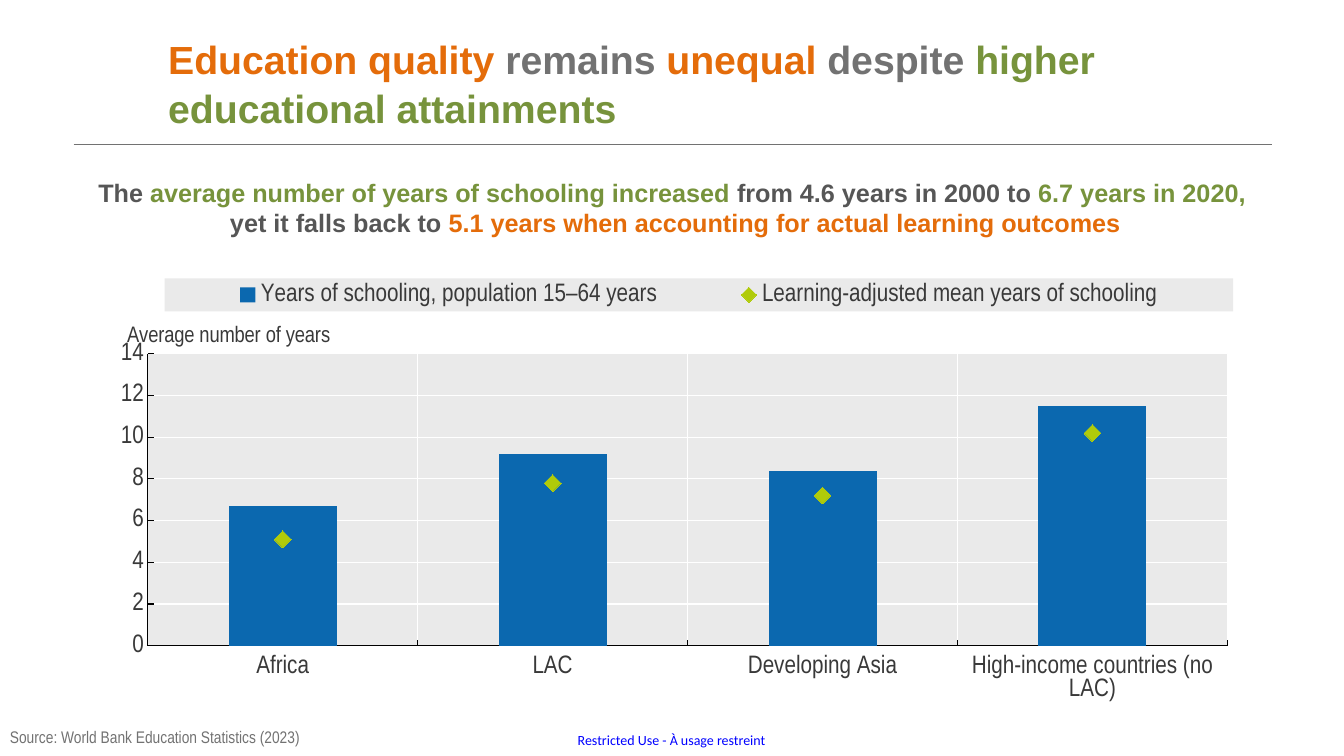
"""Build a slide on schooling years and learning outcomes by region."""
from dataclasses import dataclass

from lxml.etree import SubElement
from pptx import Presentation
from pptx.chart.chart import Chart
from pptx.chart.data import CategoryChartData
from pptx.dml.color import RGBColor
from pptx.enum.chart import (XL_CHART_TYPE, XL_LEGEND_POSITION, XL_MARKER_STYLE,
                             XL_TICK_LABEL_POSITION, XL_TICK_MARK)
from pptx.enum.shapes import MSO_CONNECTOR
from pptx.enum.text import MSO_ANCHOR, PP_ALIGN
from pptx.oxml import parse_xml
from pptx.oxml.ns import nsdecls, qn
from pptx.slide import Slide
from pptx.util import Inches, Pt


@dataclass(frozen=True)
class Theme:
    """Colours, fonts and type sizes of the slide."""
    orange: str = "E46C0A"
    green: str = "77933C"
    grey: str = "727272"
    dark: str = "565656"
    link: str = "0000FF"
    chart_text: str = "393939"
    panel: str = "EAEAEA"
    bar: str = "0B68AF"
    marker: str = "B0CB0A"
    grid: str = "FFFFFF"
    axis: str = "000000"
    sans: str = "Arial"
    narrow: str = "Arial Narrow"
    label: str = "Calibri"
    title: int = 28
    body: int = 18
    axis_title: int = 16
    source: int = 12
    footer: int = 10


THEME = Theme()


@dataclass(frozen=True)
class Span:
    """A stretch of text in one colour."""
    text: str
    color: str


@dataclass(frozen=True)
class TextBlock:
    """A text box with its place, paragraphs and type."""
    left: float
    top: float
    width: float
    height: float
    paras: list[list[Span]]
    font: str
    size: int
    bold: bool = False
    align: PP_ALIGN = PP_ALIGN.LEFT
    anchor: MSO_ANCHOR = MSO_ANCHOR.TOP
    inset: bool = True
    spacing: float = 1.0


@dataclass(frozen=True)
class Place:
    """A position in fractions of the chart area."""
    x: float
    y: float
    w: float = 0
    h: float = 0


BLOCKS = [
    TextBlock(1.57, 0.26, 11.34, 1.12, [[
        Span("Education quality ", THEME.orange), Span("remains ", THEME.grey),
        Span("unequal", THEME.orange), Span(" despite ", THEME.grey),
        Span("higher educational attainments", THEME.green)]],
        THEME.sans, THEME.title, bold=True, anchor=MSO_ANCHOR.MIDDLE, spacing=1.04),
    TextBlock(-0.47, 1.71, 14.27, 0.71, [
        [Span("The ", THEME.dark),
         Span("average number of years of schooling increased ", THEME.green),
         Span("from 4.6 years in 2000 to ", THEME.dark),
         Span("6.7 years in 2020,", THEME.green)],
        [Span(" yet it falls back to ", THEME.dark),
         Span("5.1 years when accounting for actual learning outcomes", THEME.orange)]],
        THEME.sans, THEME.body, bold=True, align=PP_ALIGN.CENTER),
    TextBlock(0, 7.16, 6.38, 0.3,
              [[Span("Source: World Bank Education Statistics (2023)", THEME.grey)]],
              THEME.narrow, THEME.source),
    TextBlock(5.73, 7.26, 1.91, 0.17,
              [[Span("Restricted Use - À usage restreint", THEME.link)]],
              THEME.label, THEME.footer, inset=False),
]
REGIONS = ["Africa", "LAC", "Developing Asia", "High-income countries (no LAC)"]
MEASURES = {
    "Years of schooling, population 15–64 years": [6.7, 9.2, 8.4, 11.5],
    "Learning-adjusted mean years of schooling": [5.1, 7.8, 7.2, 10.2],
}


def rgb(color: str) -> RGBColor:
    """Turn a hex colour into an RGBColor."""
    return RGBColor.from_string(color)


def add_text(page: Slide, block: TextBlock) -> None:
    """Draw one text block."""
    box = page.shapes.add_textbox(Inches(block.left), Inches(block.top),
                                  Inches(block.width), Inches(block.height))
    frame = box.text_frame
    frame.word_wrap = True
    frame.vertical_anchor = block.anchor
    if not block.inset:
        frame.margin_left = frame.margin_right = 0
        frame.margin_top = frame.margin_bottom = 0
    for index, spans in enumerate(block.paras):
        para = frame.add_paragraph() if index else frame.paragraphs[0]
        para.alignment = block.align
        para.line_spacing = block.spacing
        para.font.name = block.font
        para.font.size = Pt(block.size)
        para.font.bold = block.bold
        for span in spans:
            run = para.add_run()
            run.text = span.text
            run.font.color.rgb = rgb(span.color)


def add_rule(page: Slide) -> None:
    """Draw the line under the title."""
    rule = page.shapes.add_connector(MSO_CONNECTOR.STRAIGHT, Inches(0.73), Inches(1.43),
                                     Inches(12.62), Inches(1.43))
    rule.line.color.rgb = rgb(THEME.grey)
    rule.line.width = Pt(0.5)
    SubElement(rule._element.spPr, qn("a:effectLst"))


def set_layout(parent, index: int, place: Place, inner: bool = False) -> None:
    """Give a chart part a manual layout as its child at the index."""
    for old in parent.findall(qn("c:layout")):
        parent.remove(old)
    layout = parse_xml(f"<c:layout {nsdecls('c')}><c:manualLayout/></c:layout>")
    values = {"layoutTarget": "inner"} if inner else {}
    values |= {"xMode": "edge", "yMode": "edge", "x": place.x, "y": place.y}
    if place.w:
        values |= {"w": place.w, "h": place.h}
    for name, value in values.items():
        SubElement(layout[0], qn(f"c:{name}")).set("val", str(value))
    parent.insert(index, layout)


def panel_fill():
    """Return shape properties with the panel fill."""
    return parse_xml(f'<c:spPr {nsdecls("c", "a")}><a:solidFill>'
                     f'<a:srgbClr val="{THEME.panel}"/></a:solidFill></c:spPr>')


def move_to_markers(chart: Chart) -> None:
    """Show the second series as markers on the same axes."""
    bars = chart.plots[0]._element
    line = parse_xml(f'<c:lineChart {nsdecls("c")}><c:grouping val="standard"/>'
                     '<c:varyColors val="0"/><c:marker val="1"/></c:lineChart>')
    series = bars.findall(qn("c:ser"))[1]
    for flag in series.findall(qn("c:invertIfNegative")):
        series.remove(flag)
    line.insert(2, series)
    for axis in bars.findall(qn("c:axId")):
        SubElement(line, qn("c:axId")).set("val", axis.get("val"))
    bars.addnext(line)
    learning = chart.plots[1].series[0]
    learning.smooth = False
    learning.format.line.fill.background()
    learning.marker.style = XL_MARKER_STYLE.DIAMOND
    learning.marker.size = 12
    learning.marker.format.fill.solid()
    learning.marker.format.fill.fore_color.rgb = rgb(THEME.marker)
    learning.marker.format.line.fill.background()


def style_axes(chart: Chart) -> None:
    """Style both axes and the value axis title."""
    for axis in (chart.category_axis, chart.value_axis):
        axis.major_tick_mark = XL_TICK_MARK.INSIDE
        axis.minor_tick_mark = XL_TICK_MARK.NONE
        axis.has_major_gridlines = True
        for line, color in ((axis.format.line, THEME.axis),
                            (axis.major_gridlines.format.line, THEME.grid)):
            line.color.rgb = rgb(color)
            line.width = Pt(0.75)
    chart.category_axis.tick_label_position = XL_TICK_LABEL_POSITION.LOW
    values = chart.value_axis
    values.minimum_scale, values.maximum_scale, values.major_unit = 0, 14, 2
    title = values.axis_title
    title.text_frame.text = "Average number of years"
    font = title.text_frame.paragraphs[0].font
    font.name, font.size, font.bold = THEME.narrow, Pt(THEME.axis_title), False
    font.color.rgb = rgb(THEME.chart_text)
    title._element.find(f".//{qn('a:bodyPr')}").set("rot", "0")
    set_layout(title._element, 1, Place(0.01, 0.14))


def add_schooling_chart(page: Slide) -> None:
    """Draw the chart of schooling years by region."""
    data = CategoryChartData()
    data.categories = REGIONS
    for name, values in MEASURES.items():
        data.add_series(name, values)
    chart = page.shapes.add_chart(XL_CHART_TYPE.COLUMN_CLUSTERED, Inches(1.11), Inches(2.55),
                                  Inches(11.12), Inches(4.49), data).chart
    chart.has_title = False
    chart.font.name, chart.font.size = THEME.narrow, Pt(THEME.body)
    chart.font.color.rgb = rgb(THEME.chart_text)
    bars = chart.plots[0]
    bars.gap_width, bars.overlap, bars.vary_by_categories = 150, -27, False
    bars.series[0].format.fill.solid()
    bars.series[0].format.fill.fore_color.rgb = rgb(THEME.bar)
    move_to_markers(chart)
    style_axes(chart)
    area = chart._chartSpace.chart.plotArea
    set_layout(area, 0, Place(0.032, 0.214, 0.963, 0.645), inner=True)
    area.append(panel_fill())
    chart.has_legend = True
    legend = chart.legend
    legend.position = XL_LEGEND_POSITION.BOTTOM
    legend.include_in_layout = True
    set_layout(legend._element, 1, Place(0.047, 0.047, 0.96, 0.073))
    legend._element.find(qn("c:overlay")).addnext(panel_fill())


def main() -> None:
    """Build and save the deck."""
    deck = Presentation()
    deck.slide_width, deck.slide_height = Inches(13.33), Inches(7.5)
    page = deck.slides.add_slide(deck.slide_layouts[6])
    add_rule(page)
    for block in BLOCKS:
        add_text(page, block)
    add_schooling_chart(page)
    deck.save("out.pptx")


if __name__ == "__main__":
    main()
